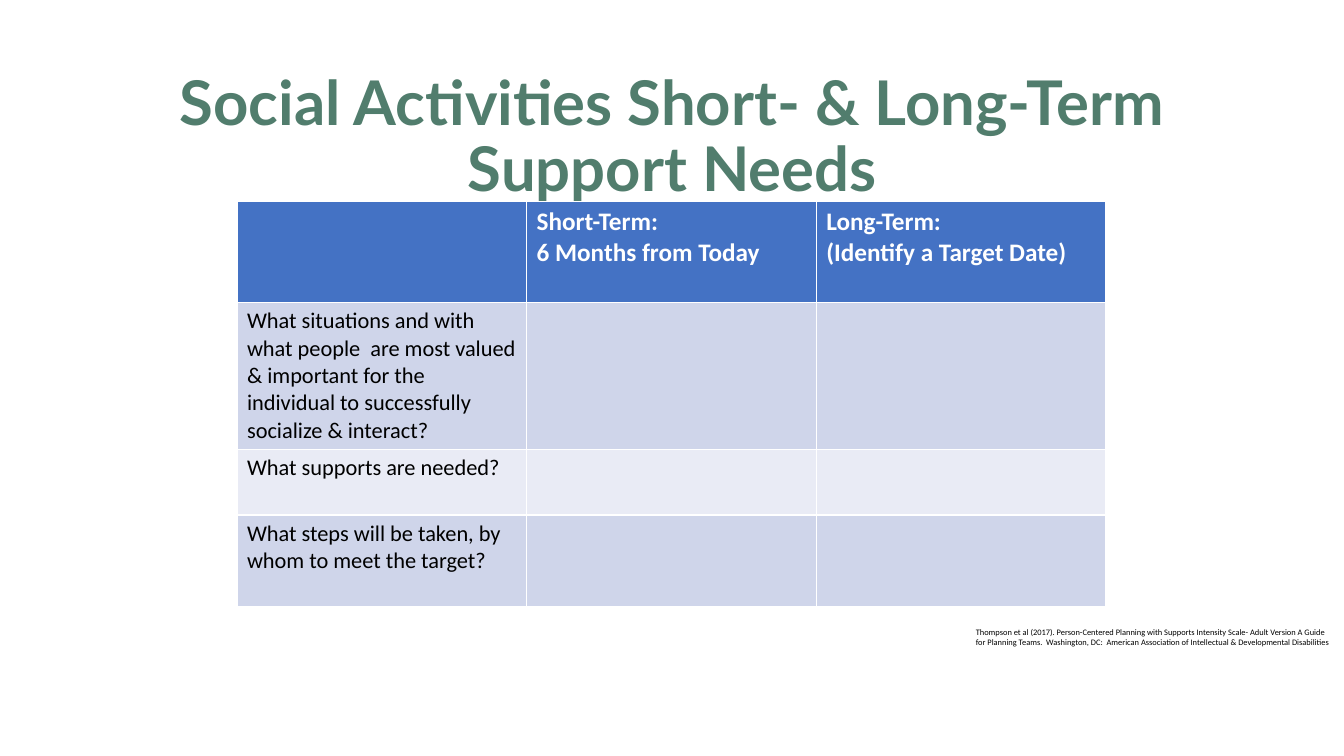
from dataclasses import dataclass

from pptx import Presentation
from pptx.dml.color import RGBColor
from pptx.enum.text import MSO_ANCHOR, PP_ALIGN
from pptx.util import Inches, Pt

CENTER = PP_ALIGN.CENTER
MIDDLE = MSO_ANCHOR.MIDDLE


@dataclass(frozen=True)
class Theme:
    title_font: str = "Lato"
    body_font: str = "Calibri"
    title: str = "517D6D"
    header: str = "4472C4"
    bands: tuple = ("CFD5EA", "E9EBF5")
    light: str = "FFFFFF"
    dark: str = "000000"
    title_size: int = 44
    header_size: int = 18
    body_size: int = 16
    citation_size: int = 6


THEME = Theme()
TITLE_FORMAT = {"name": THEME.title_font, "size": Pt(THEME.title_size),
                "bold": True, "color": THEME.title}
HEADER_FORMAT = {"name": THEME.body_font, "size": Pt(THEME.header_size),
                 "bold": True, "color": THEME.light}
BODY_FORMAT = {"name": THEME.body_font, "size": Pt(THEME.body_size),
               "bold": False, "color": THEME.dark}
CITATION_FORMAT = {**BODY_FORMAT, "size": Pt(THEME.citation_size)}

TITLE = "Social Activities Short- & Long-Term Support Needs"
HEADINGS = [[], ["Short-Term:", "6 Months from Today"],
            ["Long-Term:", "(Identify a Target Date)"]]
QUESTIONS = [
    "What situations and with what people  are most valued & important "
    "for the individual to successfully socialize & interact?",
    "What supports are needed?",
    "What steps will be taken, by whom to meet the target?",
]
ROW_HEIGHTS = [1, 1.46, 0.65, 0.91]
CITATION = ("Thompson et al (2017). Person-Centered Planning with Supports "
            "Intensity Scale- Adult Version A Guide for Planning Teams.  "
            "Washington, DC:  American Association of Intellectual & "
            "Developmental Disabilities")


def write_text(frame, lines, format_values):
    """Fill a text frame with one paragraph per line."""
    frame.word_wrap = True
    for index, line in enumerate(lines):
        para = frame.paragraphs[0] if index == 0 else frame.add_paragraph()
        span = para.add_run()
        span.text = line
        for name, value in format_values.items():
            if name == "color":
                span.font.color.rgb = RGBColor.from_string(value)
            else:
                setattr(span.font, name, value)


def add_text(page, box, text, format_values):
    frame = page.shapes.add_textbox(*map(Inches, box)).text_frame
    write_text(frame, [text], format_values)
    return frame


def add_title(page, box):
    frame = add_text(page, box, TITLE, TITLE_FORMAT)
    frame.vertical_anchor = MIDDLE
    para = frame.paragraphs[0]
    para.alignment = CENTER
    para.line_spacing = 0.9


def add_support_table(page, box):
    rows = [HEADINGS] + [[[question], [], []] for question in QUESTIONS]
    table = page.shapes.add_table(len(rows), len(HEADINGS),
                                  *map(Inches, box)).table
    for column in table.columns:
        column.width = Inches(box[2] / len(HEADINGS))

    for row_index, row in enumerate(rows):
        table.rows[row_index].height = Inches(ROW_HEIGHTS[row_index])
        is_header = row_index == 0
        color = THEME.header if is_header else THEME.bands[(row_index - 1) % 2]
        for column_index, lines in enumerate(row):
            cell = table.cell(row_index, column_index)
            cell.fill.solid()
            cell.fill.fore_color.rgb = RGBColor.from_string(color)
            write_text(cell.text_frame, lines,
                       HEADER_FORMAT if is_header else BODY_FORMAT)


def add_citation(page, box):
    add_text(page, box, CITATION, CITATION_FORMAT)


def main():
    deck = Presentation()
    deck.slide_width = Inches(13.33)
    deck.slide_height = Inches(7.5)
    page = deck.slides.add_slide(deck.slide_layouts[6])

    # Title, planning table, then source credit
    add_title(page, (0.92, 0.65, 11.5, 1.45))
    add_support_table(page, (2.35, 2, 8.62, sum(ROW_HEIGHTS)))
    add_citation(page, (9.58, 6.17, 3.76, 0.3))
    deck.save("out.pptx")


if __name__ == "__main__":
    main()
